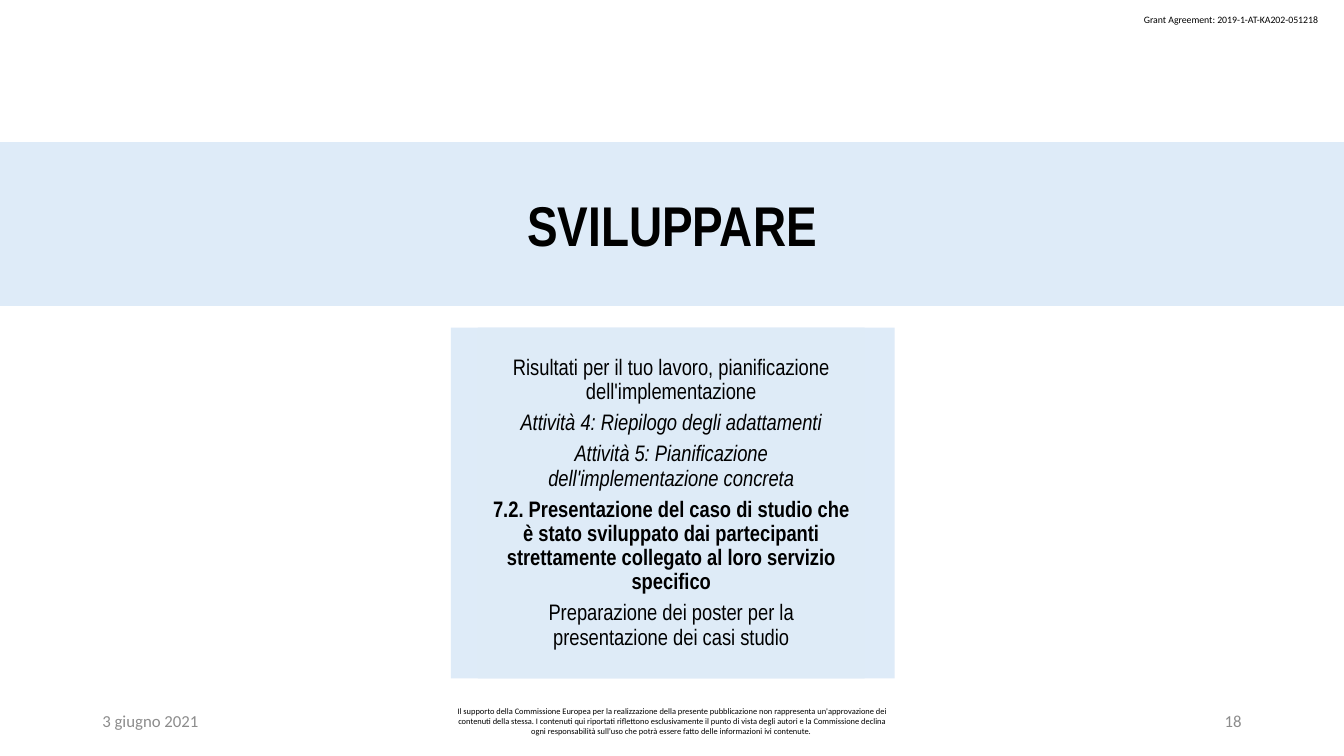
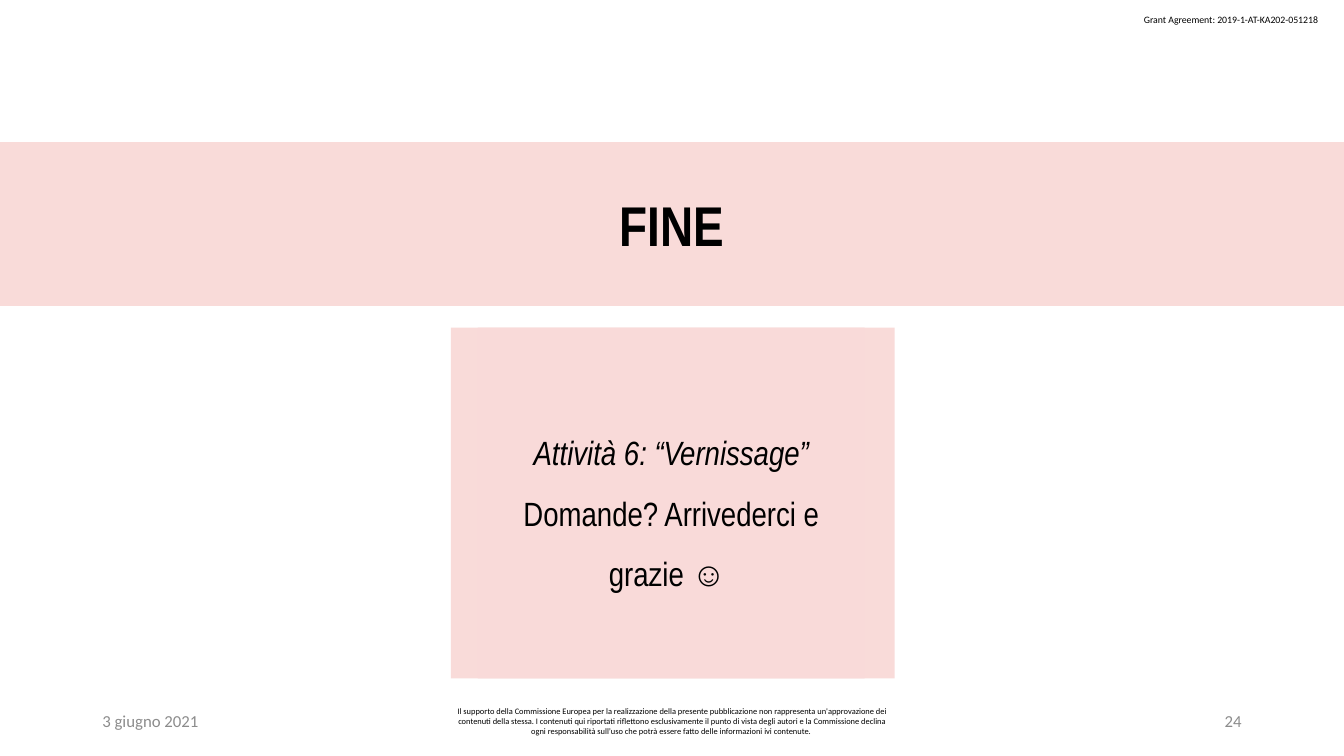
from dataclasses import dataclass

from lxml import etree
from pptx import Presentation
from pptx.dml.color import RGBColor
from pptx.enum.shapes import MSO_SHAPE
from pptx.enum.text import MSO_ANCHOR, MSO_AUTO_SIZE, PP_ALIGN
from pptx.oxml.ns import qn
from pptx.util import Pt

LEFT, CENTER, RIGHT = PP_ALIGN.LEFT, PP_ALIGN.CENTER, PP_ALIGN.RIGHT
MIDDLE, TOP = MSO_ANCHOR.MIDDLE, MSO_ANCHOR.TOP
NO_FIT = MSO_AUTO_SIZE.NONE
RECTANGLE = MSO_SHAPE.RECTANGLE

HEADING_FONT = "Arial Narrow"
FOOTER_FONT = "Calibri"
BLACK, GREY = "000000", "8C8C8C"
PAGE_WIDTH, PAGE_HEIGHT = 960, 540
TITLE_AND_CONTENT = 1

GRANT = "Grant Agreement: 2019-1-AT-KA202-051218"
DATE = "3 giugno 2021"
DISCLAIMER = (
    "Il supporto della Commissione Europea per la realizzazione della presente "
    "pubblicazione non rappresenta un'approvazione dei contenuti della stessa. "
    "I contenuti qui riportati riflettono esclusivamente il punto di vista degli "
    "autori e la Commissione declina ogni responsabilità sull’uso che potrà "
    "essere fatto delle informazioni ivi contenute. "
)


@dataclass(frozen=True)
class Area:
    left: float
    top: float
    width: float
    height: float


@dataclass(frozen=True)
class Line:
    text: str
    bold: bool = False
    italic: bool = False


@dataclass(frozen=True)
class Section:
    title: str
    number: int
    band_fill: str
    text_fill: str
    size: float
    line_spacing: float
    space_before: float
    lines: tuple[Line, ...]


GRANT_AREA = Area(810, 6, 142, 16)
BAND = Area(0, 101.5, PAGE_WIDTH, 117)
PANEL = Area(322, 234, 317, 250.5)
PANEL_TEXT = Area(341.3, PANEL.top, 276.4, PANEL.height)
FOOTER_TOP, FOOTER_HEIGHT = 500.5, 28.8
DATE_AREA = Area(66, FOOTER_TOP, 216, FOOTER_HEIGHT)
DISCLAIMER_AREA = Area(318, FOOTER_TOP, 324, FOOTER_HEIGHT)
NUMBER_AREA = Area(678, FOOTER_TOP, 216, FOOTER_HEIGHT)

SECTIONS = (
    Section(
        "SVILUPPARE", 18, "DEEBF8", "DEEBF7", 16, 0.9, 5,
        (
            Line("Risultati per il tuo lavoro, pianificazione dell'implementazione"),
            Line("Attività 4: Riepilogo degli adattamenti", italic=True),
            Line("Attività 5: Pianificazione dell'implementazione concreta", italic=True),
            Line(
                "7.2. Presentazione del caso di studio che è stato sviluppato dai "
                "partecipanti strettamente collegato al loro servizio specifico",
                bold=True,
            ),
            Line("Preparazione dei poster per la presentazione dei casi studio"),
        ),
    ),
    Section(
        "FINE", 24, "F9DBD9", "F9DAD9", 24, 1.5, 0,
        (
            Line("Attività 6: “Vernissage”", italic=True),
            Line("Domande? Arrivederci e grazie ☺ "),
        ),
    ),
)


def rgb(code: str) -> RGBColor:
    return RGBColor.from_string(code)


def fill_solid(shape, code: str) -> None:
    shape.fill.solid()
    shape.fill.fore_color.rgb = rgb(code)


def write(para, text: str, *, size: float, font: str = HEADING_FONT, color: str = BLACK,
          bold: bool = False, italic: bool = False, align=CENTER,
          line_spacing: float = 1.0, space_before: float = 0) -> None:
    para.alignment = align
    para.line_spacing = line_spacing
    para.space_before = Pt(space_before)
    span = para.add_run()
    span.text = text
    span.font.name = font
    span.font.size = Pt(size)
    span.font.bold = bold
    span.font.italic = italic
    span.font.color.rgb = rgb(color)


def remove_bullet(para) -> None:
    properties = para._p.get_or_add_pPr()
    properties.set("marL", "0")
    properties.set("indent", "0")
    etree.SubElement(properties, qn("a:buNone"))


def place_placeholder(box, area: Area, fill: str):
    """Move and fill a placeholder, and return its prepared text frame."""
    box.left, box.top = Pt(area.left), Pt(area.top)
    box.width, box.height = Pt(area.width), Pt(area.height)
    fill_solid(box, fill)
    frame = box.text_frame
    frame.word_wrap = True
    frame.auto_size = NO_FIT
    frame.vertical_anchor = MIDDLE
    frame.margin_left = frame.margin_right = Pt(9.6)
    frame.margin_top = frame.margin_bottom = Pt(4.8)
    return frame


def add_label(page, area: Area, text: str, *, size: float, color: str = BLACK,
              align=LEFT, anchor=MIDDLE, wrap: bool = True) -> None:
    box = page.shapes.add_textbox(
        Pt(area.left), Pt(area.top), Pt(area.width), Pt(area.height))
    frame = box.text_frame
    frame.word_wrap = wrap
    frame.vertical_anchor = anchor
    write(frame.paragraphs[0], text, size=size, font=FOOTER_FONT, color=color, align=align)


def add_frame_texts(page, number: int) -> None:
    """Add the grant line and the footer that every page carries."""
    add_label(page, GRANT_AREA, GRANT, size=7, anchor=TOP, wrap=False)
    add_label(page, DATE_AREA, DATE, size=12, color=GREY)
    add_label(page, DISCLAIMER_AREA, DISCLAIMER, size=6, align=CENTER)
    add_label(page, NUMBER_AREA, str(number), size=12, color=GREY, align=RIGHT)


def add_panel_behind(page, body, fill: str) -> None:
    panel = page.shapes.add_shape(
        RECTANGLE, Pt(PANEL.left), Pt(PANEL.top), Pt(PANEL.width), Pt(PANEL.height))
    panel.shadow.inherit = False
    fill_solid(panel, fill)
    panel.line.fill.background()
    body.element.addprevious(panel.element)


def add_section(deck, section: Section) -> None:
    page = deck.slides.add_slide(deck.slide_layouts[TITLE_AND_CONTENT])
    title_frame = place_placeholder(page.shapes.title, BAND, section.band_fill)
    write(title_frame.paragraphs[0], section.title, size=40, bold=True)

    body = page.placeholders[1]
    add_panel_behind(page, body, section.band_fill)
    body_frame = place_placeholder(body, PANEL_TEXT, section.text_fill)
    for index, line in enumerate(section.lines):
        para = body_frame.add_paragraph() if index else body_frame.paragraphs[0]
        remove_bullet(para)
        write(para, line.text, size=section.size, bold=line.bold, italic=line.italic,
              line_spacing=section.line_spacing,
              space_before=section.space_before if index else 0)
    add_frame_texts(page, section.number)


def main() -> None:
    deck = Presentation()
    deck.slide_width, deck.slide_height = Pt(PAGE_WIDTH), Pt(PAGE_HEIGHT)
    for section in SECTIONS:
        add_section(deck, section)
    deck.save("out.pptx")


if __name__ == "__main__":
    main()
